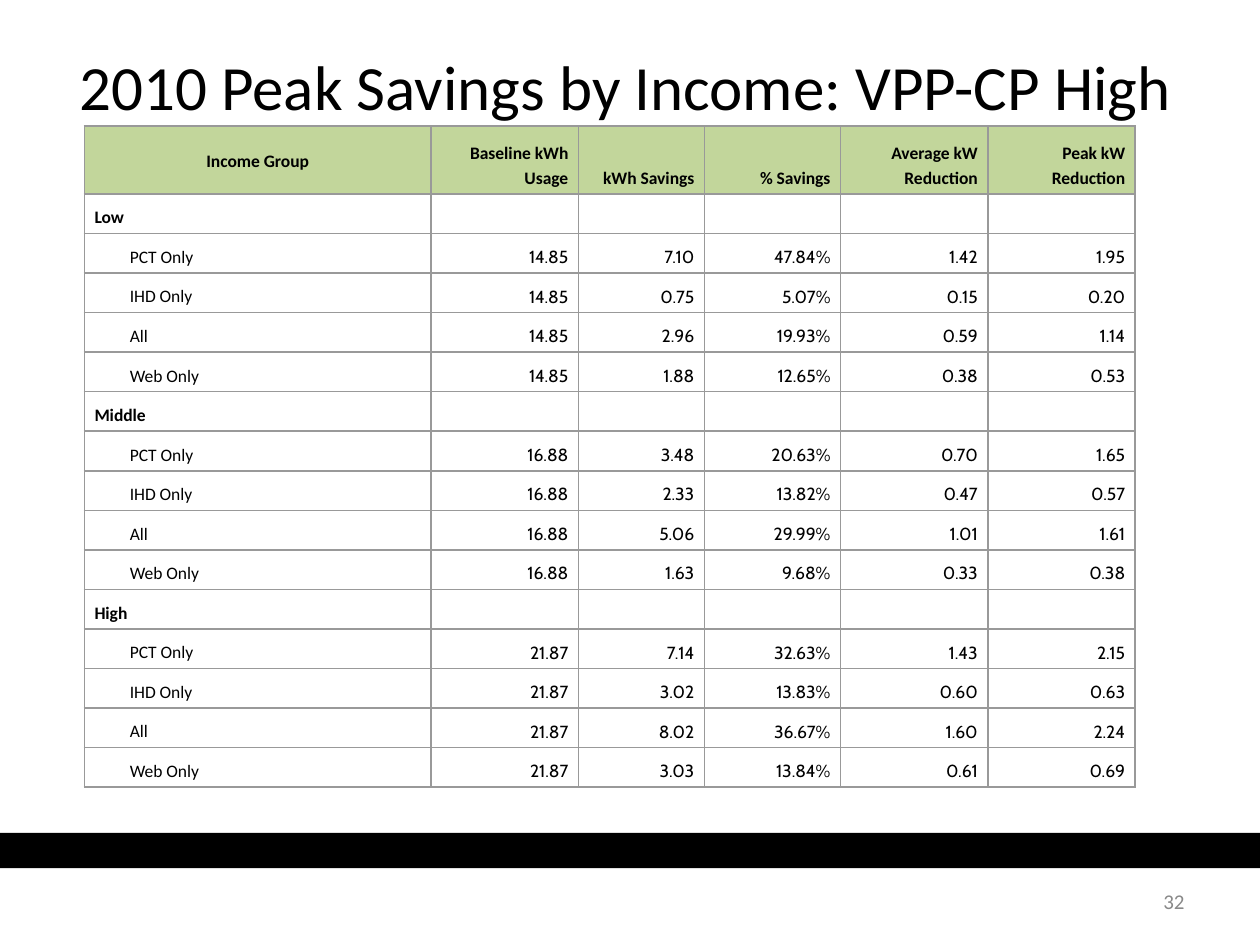
from dataclasses import dataclass

from lxml import etree
from pptx import Presentation
from pptx.dml.color import RGBColor
from pptx.enum import shapes, text
from pptx.oxml import ns
from pptx.util import Inches, Pt


@dataclass(frozen=True)
class Theme:
    ink: str = "000000"
    paper: str = "FFFFFF"
    header: str = "C2D69B"
    grid: str = "999999"
    muted: str = "898989"
    label_font: str = "Calibri"
    number_font: str = "Cabin"
    title_size: int = 36
    page_size: int = 12
    table_size: int = 10


LEFT, CENTER, RIGHT = text.PP_ALIGN.LEFT, text.PP_ALIGN.CENTER, text.PP_ALIGN.RIGHT
MIDDLE, BOTTOM = text.MSO_ANCHOR.MIDDLE, text.MSO_ANCHOR.BOTTOM

HEADINGS = ["Income Group", "Baseline kWh Usage", "kWh Savings", "% Savings",
            "Average kW Reduction", "Peak kW Reduction"]
COLUMN_WIDTHS = [2.75, 1.17, 1, 1.08, 1.17, 1.17]
TABLE_HEIGHT, HEADER_HEIGHT = 5.25, 0.54
DEVICES = ["PCT Only", "IHD Only", "All", "Web Only"]
# Income group, baseline usage, then savings and reductions for each device
GROUPS = [
    ("Low", "14.85", [("7.10", "47.84%", "1.42", "1.95"),
                      ("0.75", "5.07%", "0.15", "0.20"),
                      ("2.96", "19.93%", "0.59", "1.14"),
                      ("1.88", "12.65%", "0.38", "0.53")]),
    ("Middle", "16.88", [("3.48", "20.63%", "0.70", "1.65"),
                         ("2.33", "13.82%", "0.47", "0.57"),
                         ("5.06", "29.99%", "1.01", "1.61"),
                         ("1.63", "9.68%", "0.33", "0.38")]),
    ("High", "21.87", [("7.14", "32.63%", "1.43", "2.15"),
                       ("3.02", "13.83%", "0.60", "0.63"),
                       ("8.02", "36.67%", "1.60", "2.24"),
                       ("3.03", "13.84%", "0.61", "0.69")]),
]


class SlideBuilder:
    def __init__(self, slide, theme):
        self.slide = slide
        self.theme = theme

    def add_text(self, paragraph, words, size, align, color=None, font=None, bold=False):
        paragraph.alignment = align
        run = paragraph.add_run()
        run.text = words
        run.font.size = Pt(size)
        run.font.name = font or self.theme.label_font
        run.font.bold = bold
        run.font.color.rgb = RGBColor.from_string(color or self.theme.ink)

    def rectangle(self, box, color):
        rectangle = self.slide.shapes.add_shape(
            shapes.MSO_SHAPE.RECTANGLE, *map(Inches, box))
        rectangle.shadow.inherit = False
        rectangle.fill.solid()
        rectangle.fill.fore_color.rgb = RGBColor.from_string(color)
        rectangle.line.fill.background()
        return rectangle

    def title(self, box, words):
        frame = self.rectangle(box, self.theme.paper).text_frame
        frame.margin_left = frame.margin_right = 0
        frame.margin_top = frame.margin_bottom = 0
        frame.word_wrap = True
        frame.vertical_anchor = MIDDLE
        self.add_text(frame.paragraphs[0], words, self.theme.title_size, CENTER)

    def page_number(self, box, number):
        frame = self.slide.shapes.add_textbox(*map(Inches, box)).text_frame
        frame.word_wrap = True
        frame.vertical_anchor = MIDDLE
        self.add_text(frame.paragraphs[0], number, self.theme.page_size, RIGHT,
                      self.theme.muted)

    def table(self, left, top, widths, row_count):
        table = self.slide.shapes.add_table(
            row_count, len(widths), Inches(left), Inches(top),
            Inches(sum(widths)), Inches(TABLE_HEIGHT)).table
        table.first_row = table.horz_banding = False
        for column, width in zip(table.columns, widths):
            column.width = Inches(width)
        for row in table.rows:
            row.height = Inches((TABLE_HEIGHT - HEADER_HEIGHT) / (row_count - 1))
        table.rows[0].height = Inches(HEADER_HEIGHT)
        return table

    def borders(self, cell):
        properties = cell._tc.get_or_add_tcPr()
        for side in ("lnL", "lnR", "lnT", "lnB"):
            line = etree.SubElement(properties, ns.qn(f"a:{side}"), w=str(Pt(1)))
            fill = etree.SubElement(line, ns.qn("a:solidFill"))
            etree.SubElement(fill, ns.qn("a:srgbClr"), val=self.theme.grid)

    def cell(self, cell, words, align, anchor=BOTTOM, fill=None, indent=0, **style):
        self.borders(cell)
        if fill:
            cell.fill.solid()
            cell.fill.fore_color.rgb = RGBColor.from_string(fill)
        else:
            cell.fill.background()
        cell.margin_left = cell.margin_right = Inches(0.08)
        cell.margin_top = cell.margin_bottom = Inches(0.04)
        cell.vertical_anchor = anchor
        paragraph = cell.text_frame.paragraphs[0]
        paragraph.line_spacing = 1.15
        if indent:
            paragraph._p.get_or_add_pPr().set("indent", str(Inches(indent)))
        if words:
            self.add_text(paragraph, words, self.theme.table_size, align, **style)
        else:  # keeps an empty cell from stretching its row
            etree.SubElement(paragraph._p, ns.qn("a:endParaRPr"),
                             sz=str(self.theme.table_size * 100))


def savings_table(builder):
    theme = builder.theme
    table = builder.table(0.67, 1, COLUMN_WIDTHS, 1 + len(GROUPS) * (1 + len(DEVICES)))

    for column, heading in enumerate(HEADINGS):
        first = column == 0
        builder.cell(table.cell(0, column), heading, CENTER if first else RIGHT,
                     MIDDLE if first else BOTTOM, theme.header, bold=True)
    table.cell(0, 0).text_frame.paragraphs[0].space_after = Pt(2)

    row = 1
    for group, baseline, results in GROUPS:
        builder.cell(table.cell(row, 0), group, LEFT, bold=True)
        for column in range(1, len(HEADINGS)):
            builder.cell(table.cell(row, column), "", RIGHT)
        for row, (device, values) in enumerate(zip(DEVICES, results), row + 1):
            builder.cell(table.cell(row, 0), device, LEFT, indent=0.28)
            for column, value in enumerate((baseline, *values), 1):
                builder.cell(table.cell(row, column), value, RIGHT,
                             font=theme.number_font)
        row += 1


def main():
    presentation = Presentation()
    presentation.slide_width, presentation.slide_height = Inches(10), Inches(7.5)
    slide = presentation.slides.add_slide(presentation.slide_layouts[6])
    builder = SlideBuilder(slide, Theme())
    builder.rectangle((0, 6.61, 10, 0.28), builder.theme.ink)
    builder.title((0.43, 0.17, 9.07, 1.02), "2010 Peak Savings by Income: VPP-CP High")
    builder.page_number((7.17, 6.95, 2.33, 0.4), "32")
    savings_table(builder)
    presentation.save("out.pptx")


if __name__ == "__main__":
    main()
